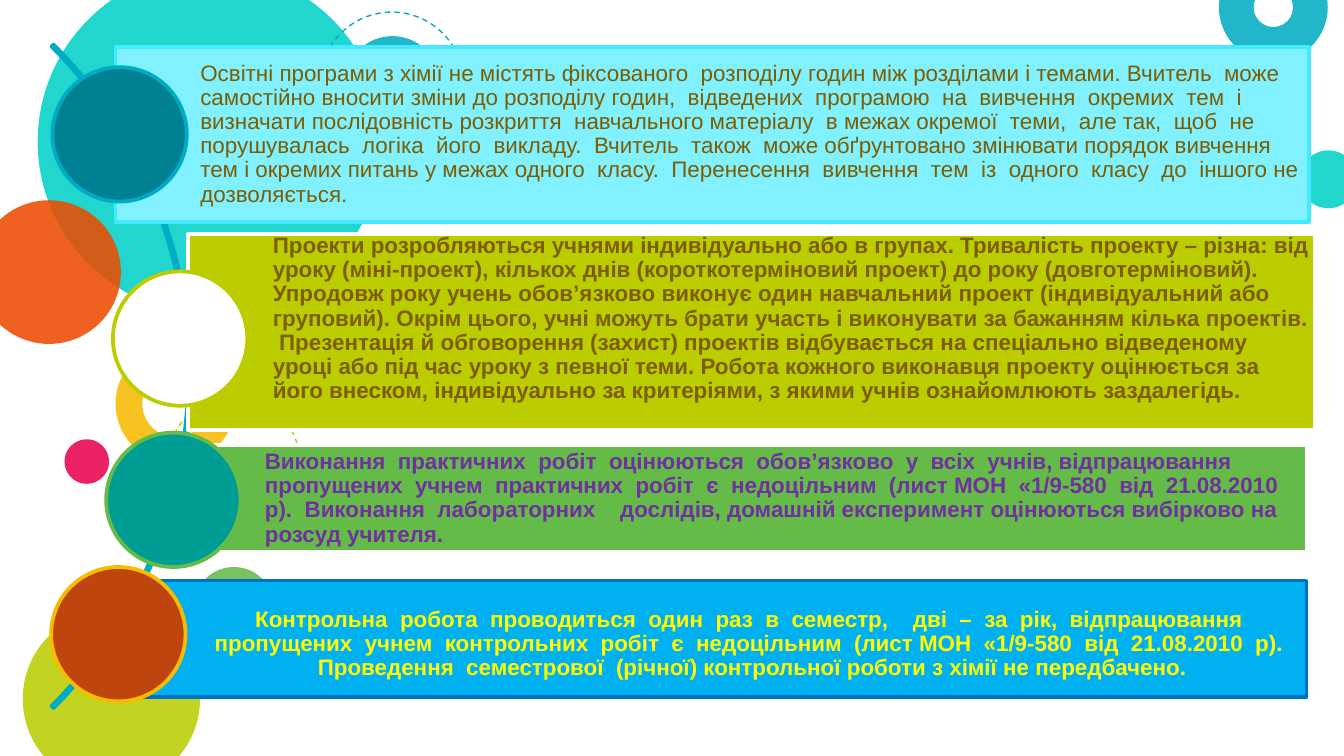
from lxml.etree import SubElement
from pptx import Presentation
from pptx.dml.color import RGBColor as Rgb
from pptx.enum.dml import MSO_LINE as Dash
from pptx.enum.shapes import MSO_SHAPE as Kind
from pptx.enum.text import MSO_ANCHOR as Anchor, PP_ALIGN as Align
from pptx.oxml.ns import qn
from pptx.util import Pt

THEME = {
    "font": "Arial", "size": 12, "spacing": 0.9, "alpha": 87,
    "edge": 2, "thin": 0.75, "pad": 2.2, "indent": 45.4, "dot": 72,
    "white": "FFFFFF", "cyan": "00ACC3", "teal": "00D1C6", "lime": "BBCD00",
    "green": "65BB48", "amber": "F8BB00", "orange": "ED4A00", "pink": "E8004C",
    "ice": "81F0FF", "aqua": "42E9FF", "sky": "00B0F0", "blue": "0070C0",
    "deep": "008192", "sea": "009D94", "rust": "BF450E",
    "brown": "7C5E00", "purple": "7030A0", "yellow": "FFFF00",
}

DISCS = [
    (20.2, -16.6, 185, "teal", 0.298),
    (-12.2, 107.3, 77, "orange", None),
    (184.3, 19.4, 51.8, "cyan", None),
    (61.9, 184.3, 64.1, "amber", 0.223),
    (12.2, 326.9, 95, "lime", None),
    (103.7, 303.8, 43.2, "green", 0.429),
    (34.6, 235.4, 23.8, "pink", None),
    (696.2, 80.6, 31, "teal", None),
    (653, -25.2, 58.3, "cyan", 0.319),
]
RINGS = [(90, 212.4, 70.6, "lime"), (171.4, 6.5, 77, "cyan")]
ARC = (-400.3, -49.7, 502.6, 502.6)

ROWS = [
    {"bar": (61.9, 25.2, 639.4, 93.6), "fill": "ice", "line": "aqua",
     "dot": (28.1, 36), "core": "deep", "rim": "cyan",
     "ink": "brown", "bold": False, "align": Align.LEFT, "shift": 0,
     "text": "Освітні програми з хімії не містять фіксованого  розподілу годин між розділами і темами. Вчитель  може самостійно вносити зміни до розподілу годин,  відведених  програмою  на  вивчення  окремих  тем  і  визначати послідовність розкриття  навчального матеріалу  в межах окремої  теми,  але так,  щоб  не  порушувалась  логіка  його  викладу.  Вчитель  також  може обґрунтовано змінювати порядок вивчення тем і окремих питань у межах одного  класу.  Перенесення  вивчення  тем  із  одного  класу  до  іншого не дозволяється."},
    {"bar": (100.8, 125.3, 603.4, 105.1), "fill": "lime", "line": "white",
     "dot": (60.5, 145.4), "core": "white", "rim": "lime",
     "ink": "brown", "bold": True, "align": Align.LEFT, "shift": -7,
     "text": "Проекти розробляються учнями індивідуально або в групах. Тривалість проекту – різна: від уроку (міні-проект), кількох днів (короткотерміновий проект) до року (довготерміновий). Упродовж року учень обов’язково виконує один навчальний проект (індивідуальний або груповий). Окрім цього, учні можуть брати участь і виконувати за бажанням кілька проектів.  Презентація й обговорення (захист) проектів відбувається на спеціально відведеному уроці або під час уроку з певної теми. Робота кожного виконавця проекту оцінюється за його внеском, індивідуально за критеріями, з якими учнів ознайомлюють заздалегідь."},
    {"bar": (96.5, 238.3, 603.4, 57.6), "fill": "green", "line": "white",
     "dot": (56.9, 231.8), "core": "sea", "rim": "green",
     "ink": "purple", "bold": True, "align": Align.LEFT, "shift": 0,
     "text": "Виконання  практичних  робіт  оцінюються  обов’язково  у  всіх  учнів, відпрацювання  пропущених  учнем  практичних  робіт  є  недоцільним  (лист МОН  «1/9-580  від  21.08.2010  р).  Виконання  лабораторних    дослідів, домашній експеримент оцінюються вибірково на розсуд учителя."},
    {"bar": (63.4, 311, 636.5, 62.6), "fill": "sky", "line": "blue",
     "dot": (27.4, 303.8), "core": "rust", "rim": "amber",
     "ink": "yellow", "bold": True, "align": Align.CENTER, "shift": 3,
     "text": "Контрольна  робота  проводиться  один  раз  в  семестр,    дві  –  за  рік,  відпрацювання  пропущених  учнем  контрольних  робіт  є  недоцільним  (лист МОН  «1/9-580  від  21.08.2010  р).  Проведення  семестрової  (річної) контрольної роботи з хімії не передбачено."},
]


def tint(name):
    return Rgb.from_string(THEME[name])


def draw(slide, kind, box, fill=None, line=None, width=THEME["edge"]):
    shape = slide.shapes.add_shape(kind, *map(Pt, box))
    shape.shadow.inherit = False
    if fill:
        shape.fill.solid()
        shape.fill.fore_color.rgb = tint(fill)
    else:
        shape.fill.background()
    if line:
        shape.line.color.rgb = tint(line)
        shape.line.width = Pt(width)
    else:
        shape.line.fill.background()
    return shape


def fade(shape):
    color = shape.fill._xPr.find(qn("a:solidFill"))[0]
    SubElement(color, qn("a:alpha")).set("val", str(THEME["alpha"] * 1000))


def write(shape, row):
    frame = shape.text_frame
    frame.word_wrap = True
    frame.vertical_anchor = Anchor.MIDDLE
    pad, shift = THEME["pad"], row["shift"]
    frame.margin_left = Pt(THEME["indent"])
    frame.margin_right = Pt(pad)
    frame.margin_top = Pt(pad + 2 * max(shift, 0))
    frame.margin_bottom = Pt(pad + 2 * max(-shift, 0))
    frame.text = row["text"]
    para = frame.paragraphs[0]
    para.alignment = row["align"]
    para.line_spacing = THEME["spacing"]
    font = para.runs[0].font
    font.name, font.size = THEME["font"], Pt(THEME["size"])
    font.bold = row["bold"]
    font.color.rgb = tint(row["ink"])


def main():
    deck = Presentation()
    deck.slide_width, deck.slide_height = Pt(720), Pt(405)
    slide = deck.slides.add_slide(deck.slide_layouts[6])

    for x, y, size, color, hole in DISCS:
        kind = Kind.DONUT if hole else Kind.OVAL
        disc = draw(slide, kind, (x, y, size, size), color)
        if hole:
            disc.adjustments[0] = hole
        fade(disc)
    for x, y, size, color in RINGS:
        ring = draw(slide, Kind.OVAL, (x, y, size, size), None, color, THEME["thin"])
        ring.line.dash_style = Dash.DASH

    arc = draw(slide, Kind.BLOCK_ARC, ARC, None, "cyan")
    for i, value in enumerate((189, 27, 0.003)):
        arc.adjustments[i] = value

    for row in ROWS:
        bar = draw(slide, Kind.RECTANGLE, row["bar"], row["fill"], row["line"])
        write(bar, row)
        box = (*row["dot"], THEME["dot"], THEME["dot"])
        draw(slide, Kind.OVAL, box, row["core"], row["rim"])

    deck.save("out.pptx")


if __name__ == "__main__":
    main()
